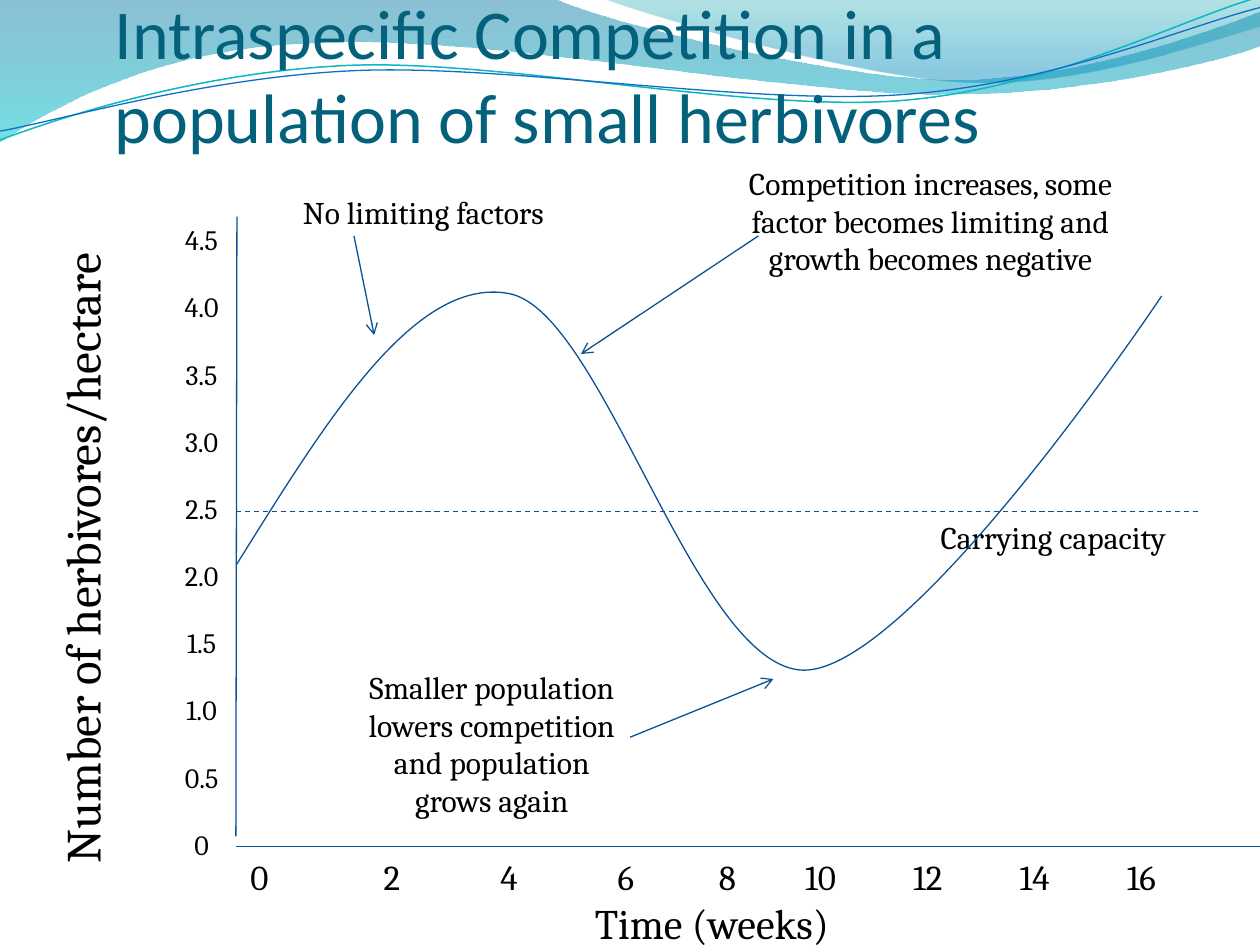
from dataclasses import dataclass

from pptx import Presentation
from pptx.dml.color import RGBColor as RGB
from pptx.enum.dml import MSO_LINE
from pptx.enum.shapes import MSO_CONNECTOR
from pptx.enum.text import MSO_ANCHOR as Anchor, PP_ALIGN as Align
from pptx.oxml.ns import qn
from pptx.util import Pt
from lxml.etree import SubElement as Sub


@dataclass(frozen=True)
class Theme:
    ink: str = "000000"
    title: str = "04617B"
    line: str = "095295"
    teal: str = "0AB8BF"
    blue: str = "0F6FC6"
    # Gradient stops: position, colour, opacity in percent
    wave: tuple = ((0, "0074A1", 45), (1, "00C6CF", 55))
    band: tuple = ((0, "00A1A9", 30), (0.8, "008BBF", 45))
    head: str = "Calibri"
    body: str = "Cambria"
    huge: int = 40
    side: int = 28
    axis: int = 24
    tick: int = 20
    note: int = 18
    small: int = 16


T = Theme()
deck = Presentation()
deck.slide_width, deck.slide_height = Pt(720), Pt(540)
slide = deck.slides.add_slide(deck.slide_layouts[6])
shapes = slide.shapes


def write(text, box, size=T.note, sizes=None, font=T.body, color=T.ink, align=Align.CENTER,
          anchor=Anchor.TOP, inset=(7.2, 3.6, 7.2, 3.6), gap=0):
    """Add a text box; each line of text is a paragraph, sizes overrides size per line."""
    area = shapes.add_textbox(*map(Pt, box))
    frame = area.text_frame
    frame.word_wrap = True
    frame.vertical_anchor = anchor
    (frame.margin_left, frame.margin_top,
     frame.margin_right, frame.margin_bottom) = map(Pt, inset)
    frame.text = text
    for i, para in enumerate(frame.paragraphs):
        para.alignment = align
        para.space_after = Pt(gap)
        run = para.runs[0].font
        run.size = Pt(sizes[i] if sizes else size)
        run.name = font
        run.color.rgb = RGB.from_string(color)
    return area


def trace(start, parts, stops=None, color=None, width=0.75):
    """Draw an outline; a part is one point (straight) or three (cubic curve)."""
    pen = shapes.build_freeform(Pt(start[0]), Pt(start[1]))
    pen.add_line_segments([(Pt(x), Pt(y)) for part in parts for x, y in part],
                          close=bool(stops))
    form = pen.convert_to_shape()
    form.shadow.inherit = False

    # Join each run of three straight steps into one cubic curve
    steps = iter(list(form.element.iter(qn("a:lnTo"))))
    for part in parts:
        group = [next(steps) for _ in part]
        if len(group) == 3:
            group[0].tag = qn("a:cubicBezTo")
            for step in group[1:]:
                group[0].append(step[0])
                step.getparent().remove(step)

    if stops:
        form.fill.gradient()
        form.fill.gradient_angle = 270
        for stop, (pos, tint, _) in zip(form.fill.gradient_stops, stops):
            stop.position = pos
            stop.color.rgb = RGB.from_string(tint)
        for node, (_, _, alpha) in zip(form.element.iter(qn("a:srgbClr")), stops):
            Sub(node, qn("a:alpha"), val=str(alpha * 1000))
        form.line.fill.background()
    else:
        form.fill.background()
        form.line.color.rgb = RGB.from_string(color)
        form.line.width = Pt(width)


# Header waves
trace((-0.7, -0.4), [
    ((317, -0.7),),
    ((342.7, 12), (478, 45.4), (546, 45.4)), ((614, 45.4), (690, 18.7), (720, 6.5)),
    ((720.7, 26),),
    ((708, 31.7), (626, 54.7), (537, 54)), ((448, 54), (275, 20.2), (185, 24.5)),
    ((93, 26), (33, 59.8), (-0.7, 81.4)),
], stops=T.wave)
trace((345, -0.7), [
    ((366.5, 8), (491, 44.6), (553.7, 46.8)), ((616.3, 49.7), (692, 23), (720, 15)),
    ((720, 0),),
], stops=T.band)
trace((0, 80), [
    ((34.6, 67), (113.8, 41), (199.4, 37.4)), ((284.4, 33.8), (427, 64), (513.4, 57.6)),
    ((599.8, 51), (675.4, 10.8), (718.6, -1.4)),
], color=T.teal, width=0.85)
trace((0, 74.9), [
    ((33.8, 69), (118, 44), (203.8, 40.3)), ((290.2, 36.7), (429.8, 60.5), (516.2, 54)),
    ((602, 48.2), (677.5, 15), (720, 4.3)),
], color=T.blue)

write("Intraspecific Competition in a population of small herbivores",
      (65.5, 15, 623.5, 75), size=T.huge, font=T.head, color=T.title,
      align=Align.LEFT, anchor=Anchor.BOTTOM, inset=(0, 3.6, 0, 0))

# Time axis: labels sit on centred tab stops
left = 103
weeks = "".join(f"\t{n}" for n in range(0, 17, 2))
time = write(weeks + "\nTime (weeks)", (left, 485.3, 607.5, 60.5),
             sizes=(T.tick, T.axis))
first = time.text_frame.paragraphs[0]
first.alignment = Align.LEFT
tabs = Sub(first._p.get_or_add_pPr(), qn("a:tabLst"))
for x in (148.3, 224, 291, 357.8, 415.8, 469, 530.3, 591.3, 652.3):
    Sub(tabs, qn("a:tab"), pos=str(Pt(x - left - 7.2)), algn="ctr")

# Number axis
marks = [f"{n / 2:.1f}" for n in range(9, 0, -1)] + ["0"]
write("\n".join(marks), (84.2, 123.8, 62, 375.8), size=T.small, gap=19.2)
label = write("Number of herbivores/hectare", (26, 112.3, 48.2, 388),
              size=T.side, align=Align.LEFT)
label.text_frame._txBody.bodyPr.set("vert", "vert270")

# Notes on the curve
for text, box in (
    ("Smaller population lowers competition and population grows again",
     (196.8, 378, 168.5, 94.3)),
    ("Carrying capacity", (517.7, 292.3, 168.5, 28.8)),
    ("Competition increases, some factor becomes limiting and growth becomes negative",
     (405, 90, 253.4, 72.7)),
    ("No limiting factors", (157.7, 106.6, 168.5, 28.8)),
):
    write(text, box)

# Population over time
trace((135.2, 322.6), [
    ((186.5, 240.5), (236.9, 157.7), (290.9, 167.8)),
    ((344.9, 177.8), (397.4, 382.3), (459.4, 383)),
    ((521.3, 383), (663.8, 169.2), (663.8, 169.2)),
], color=T.line)

# Axes, carrying capacity and arrows
for ends, style in (
    ((135.4, 123.8, 134.8, 478), None),
    ((134.8, 483.8, 736.5, 483.8), None),
    ((134.8, 292.3, 686, 292.3), "dash"),
    ((202.3, 134.8, 213.8, 191.5), "arrow"),
    ((433.4, 134.8, 332, 202.3), "arrow"),
    ((360, 421.3, 442, 388), "arrow"),
):
    rule = shapes.add_connector(MSO_CONNECTOR.STRAIGHT, *map(Pt, ends))
    rule.line.color.rgb = RGB.from_string(T.line)
    rule.line.width = Pt(0.75)
    if style == "dash":
        rule.line.dash_style = MSO_LINE.DASH
    elif style == "arrow":
        Sub(rule.line._get_or_add_ln(), qn("a:tailEnd"), type="arrow")
    Sub(rule.element.spPr, qn("a:effectLst"))

deck.save("out.pptx")
